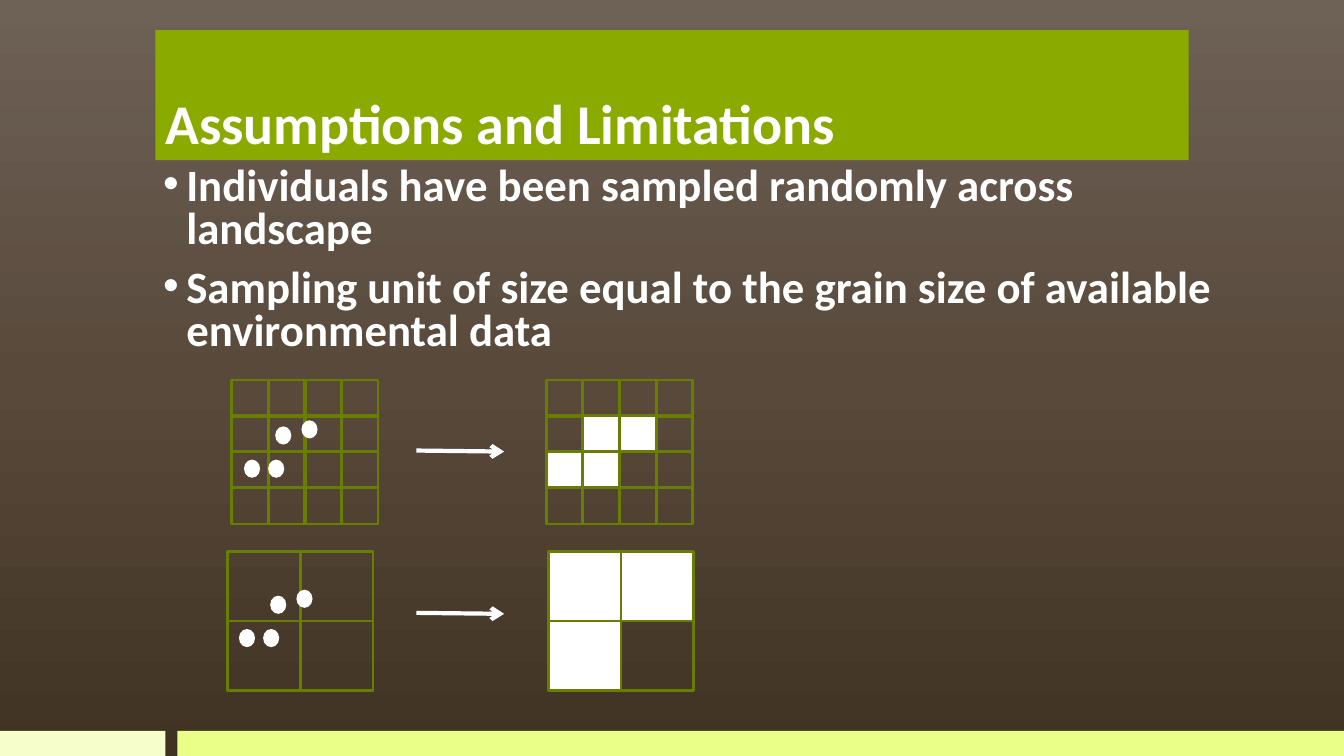
from copy import deepcopy
from dataclasses import dataclass

from lxml.etree import SubElement
from pptx import Presentation
from pptx.dml.color import RGBColor
from pptx.enum.shapes import MSO_CONNECTOR, MSO_SHAPE
from pptx.enum.text import MSO_ANCHOR, PP_ALIGN
from pptx.oxml.ns import qn
from pptx.util import Pt

SCALE = 9144


@dataclass(frozen=True)
class Theme:
    font: str = "Calibri"
    title: int = 40
    body: int = 32
    white: str = "FFFFFF"
    banner: str = "8BAA00"
    border: str = "677E00"
    pale: str = "F6FFCC"
    lime: str = "E9FF88"
    sky: tuple = ((0, "6E6156"), (0.5, "58493B"), (1, "413324"))


THEME = Theme()


def px(*sizes):
    return [size * SCALE for size in sizes]


def rgb(code):
    return RGBColor.from_string(code)


def paint(slide):
    fill = slide.background.fill
    fill.gradient()
    fill.gradient_angle = 270
    stops = next(slide.element.iter(qn("a:gsLst")))
    stops.insert(1, deepcopy(stops[0]))
    for stop, (place, code) in zip(fill.gradient_stops, THEME.sky):
        stop.position = place
        stop.color.rgb = rgb(code)


def add_box(slide, kind, box, fill=None, line=None):
    shape = slide.shapes.add_shape(kind, *px(*box))
    shape.shadow.inherit = False
    if fill:
        shape.fill.solid()
        shape.fill.fore_color.rgb = rgb(fill)
    else:
        shape.fill.background()
    if line:
        shape.line.color.rgb = rgb(line)
        shape.line.width = Pt(2)
    else:
        shape.line.fill.background()
    return shape


def add_run(para, text, size):
    run = para.add_run()
    run.text = text
    run.font.name = THEME.font
    run.font.size = Pt(size)
    run.font.bold = True
    run.font.color.rgb = rgb(THEME.white)


def add_title(slide, box, text):
    frame = add_box(slide, MSO_SHAPE.RECTANGLE, box, THEME.banner).text_frame
    frame.word_wrap = True
    frame.vertical_anchor = MSO_ANCHOR.BOTTOM
    para = frame.paragraphs[0]
    para.alignment = PP_ALIGN.LEFT
    add_run(para, text, THEME.title)


def add_list(slide, box, items):
    frame = slide.shapes.add_textbox(*px(*box)).text_frame
    frame.word_wrap = True
    indent = px(23)[0]
    for index, item in enumerate(items):
        para = frame.add_paragraph() if index else frame.paragraphs[0]
        para.line_spacing = 0.8
        para.space_before = Pt(11)
        props = para._p.get_or_add_pPr()
        props.set("marL", str(indent))
        props.set("indent", str(-indent))
        SubElement(props, qn("a:buFont")).set("typeface", "Arial")
        SubElement(props, qn("a:buChar")).set("char", "•")
        add_run(para, item, THEME.body)


def add_grid(slide, box, count, cell, filled=()):
    left, top, width, height = box
    for row in range(count):
        for col in range(count):
            x = left + col * width // count
            y = top + row * height // count
            fill = THEME.white if (row, col) in filled else None
            add_box(slide, MSO_SHAPE.RECTANGLE, (x, y, *cell), fill, THEME.border)


def add_dots(slide, left, top):
    for x, y in ((0, 39), (24, 39), (31, 6), (57, 0)):
        add_box(slide, MSO_SHAPE.OVAL, (left + x, top + y, 16, 18), THEME.white)


def add_arrow(slide, left, top):
    arrow = slide.shapes.add_connector(
        MSO_CONNECTOR.STRAIGHT, *px(left, top, left + 87, top + 1))
    arrow.line.color.rgb = rgb(THEME.white)
    arrow.line.width = Pt(3)
    SubElement(arrow.line._get_or_add_ln(), qn("a:tailEnd")).set("type", "arrow")
    SubElement(arrow._element.spPr, qn("a:effectLst"))


def main():
    deck = Presentation()
    deck.slide_width, deck.slide_height = px(1333, 750)
    slide = deck.slides.add_slide(deck.slide_layouts[6])
    paint(slide)
    add_box(slide, MSO_SHAPE.RECTANGLE, (0, 725, 164, 25), THEME.pale)
    add_box(slide, MSO_SHAPE.RECTANGLE, (176, 725, 1157, 25), THEME.lime)
    add_title(slide, (154, 30, 1025, 129), "Assumptions and Limitations")
    add_list(slide, (152, 161, 1110, 202), (
        "Individuals have been sampled randomly across landscape",
        "Sampling unit of size equal to the grain size of available environmental data",
    ))

    fine, coarse = (36, 36), (72, 69)
    add_grid(slide, (230, 377, 146, 143), 4, fine)
    add_grid(slide, (226, 547, 144, 138), 2, coarse)
    add_dots(slide, 242, 417)
    add_dots(slide, 237, 585)
    add_grid(slide, (544, 547, 144, 138), 2, coarse, {(0, 0), (0, 1), (1, 0)})
    add_grid(slide, (542, 377, 146, 143), 4, fine, {(1, 1), (1, 2), (2, 0), (2, 1)})
    for top in (447, 608):
        add_arrow(slide, 413, top)
    deck.save("out.pptx")


if __name__ == "__main__":
    main()
